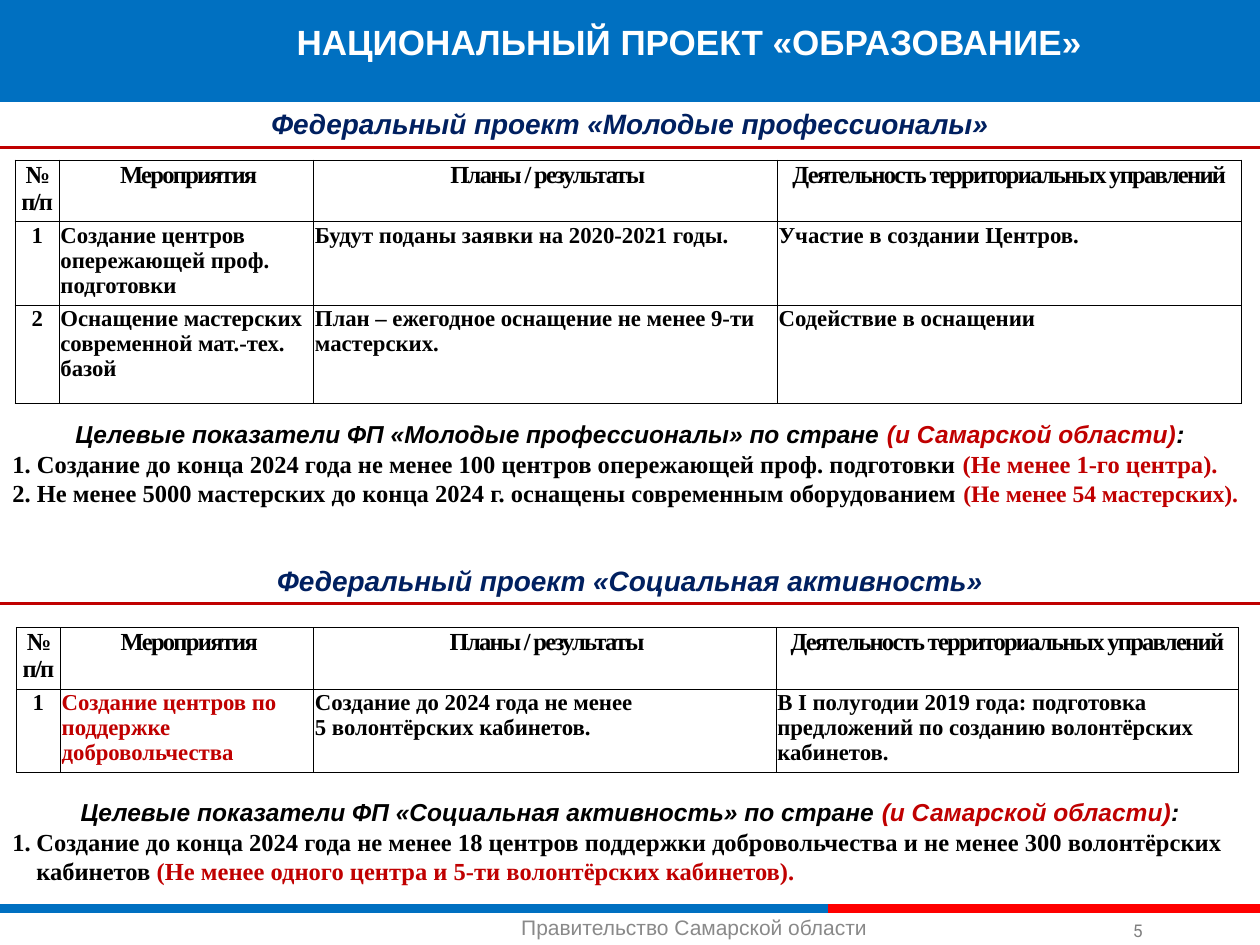
import dataclasses

import pptx
import pptx.dml.color
import pptx.enum.shapes
import pptx.enum.text
import pptx.oxml
import pptx.oxml.ns
import pptx.util

Inches = pptx.util.Inches
Pt = pptx.util.Pt
ALIGN = pptx.enum.text.PP_ALIGN
ANCHOR = pptx.enum.text.MSO_ANCHOR


@dataclasses.dataclass(frozen=True)
class Theme:
    blue: str = "0070C1"
    red: str = "FF0000"
    accent: str = "C00000"
    navy: str = "002060"
    black: str = "000000"
    white: str = "FFFFFF"
    footer: str = "898989"
    number: str = "808080"
    sans: str = "Arial"
    serif: str = "Times New Roman"
    number_font: str = "Roboto"
    title_size: float = 20
    heading_size: float = 16
    body_size: float = 14
    tight_size: float = 13.5
    cell_size: float = 13
    footer_size: float = 12
    number_size: float = 10


THEME = Theme()


@dataclasses.dataclass(frozen=True)
class Style:
    font: str
    size: float
    color: str = THEME.black
    bold: bool = True
    italic: bool = False
    spacing: int = 0  # hundredths of a point


TITLE = Style(THEME.sans, THEME.title_size, THEME.white)
HEADING = Style(THEME.sans, THEME.heading_size, THEME.navy, italic=True)
LEAD = Style(THEME.sans, THEME.body_size, italic=True)
LEAD_RED = dataclasses.replace(LEAD, color=THEME.accent)
BODY = Style(THEME.serif, THEME.body_size)
BODY_RED = dataclasses.replace(BODY, color=THEME.accent)
TIGHT_RED = dataclasses.replace(BODY_RED, size=THEME.tight_size)
TABLE_HEAD = dataclasses.replace(BODY, spacing=-100)
CELL = Style(THEME.serif, THEME.cell_size)
CELL_RED = dataclasses.replace(CELL, color=THEME.accent)
FOOTER = Style(THEME.sans, THEME.footer_size, THEME.footer, bold=False)
NUMBER = Style(THEME.number_font, THEME.number_size, THEME.number, bold=False)

TABLE_HEADERS = ("№ п/п", "\u00a0Мероприятия", "\u00a0Планы / результаты",
                 "Деятельность территориальных управлений")


def rgb(color):
    return pptx.dml.color.RGBColor.from_string(color)


def add_element(parent, xml):
    namespace = pptx.oxml.ns.nsdecls("a")
    parent.append(pptx.oxml.parse_xml(xml.replace("/>", f" {namespace}/>", 1)
                                      if xml.endswith("/>") and xml.count("<") == 1
                                      else xml.replace(">", f" {namespace}>", 1)))


def add_run(paragraph, text, style):
    run = paragraph.add_run()
    run.text = text
    run.font.name = style.font
    run.font.size = Pt(style.size)
    run.font.bold = style.bold
    run.font.italic = style.italic
    run.font.color.rgb = rgb(style.color)
    if style.spacing:
        run.font._element.set("spc", str(style.spacing))


def number_paragraph(paragraph):
    """Turn the paragraph into an automatically numbered item with a hanging indent."""
    properties = paragraph._p.get_or_add_pPr()
    properties.set("marL", str(Inches(0.19)))
    properties.set("indent", str(-Inches(0.19)))
    add_element(properties, '<a:buFont typeface="+mj-lt"/>')
    add_element(properties, '<a:buAutoNum type="arabicPeriod"/>')


def fill_text(text_frame, paragraphs, align=ALIGN.LEFT):
    """Write paragraphs, each a list of (text, style) runs."""
    for index, runs in enumerate(paragraphs):
        paragraph = text_frame.add_paragraph() if index else text_frame.paragraphs[0]
        paragraph.alignment = align
        for text, style in runs:
            add_run(paragraph, text, style)


def add_text(slide, box, paragraphs, align=ALIGN.LEFT, side=0.1, wrap=True, anchor=ANCHOR.TOP):
    text_frame = slide.shapes.add_textbox(*map(Inches, box)).text_frame
    text_frame.word_wrap = wrap
    text_frame.vertical_anchor = anchor
    text_frame.margin_left = text_frame.margin_right = Inches(side)
    text_frame.margin_top = text_frame.margin_bottom = Inches(0.05)
    fill_text(text_frame, paragraphs, align)
    return text_frame


def add_rule(slide, left, right, top, color, width):
    line = slide.shapes.add_connector(
        pptx.enum.shapes.MSO_CONNECTOR.STRAIGHT,
        Inches(left), Inches(top), Inches(right), Inches(top))
    line.line.color.rgb = rgb(color)
    line.line.width = Pt(width)
    add_element(line._element.spPr, "<a:effectLst/>")


def add_banner(slide):
    banner = slide.shapes.add_shape(
        pptx.enum.shapes.MSO_SHAPE.RECTANGLE, *map(Inches, (0, -0.03, 10, 0.84)))
    banner.shadow.inherit = False
    banner.fill.solid()
    banner.fill.fore_color.rgb = rgb(THEME.blue)
    banner.line.fill.background()


def format_cell(cell):
    cell.margin_left = cell.margin_right = cell.margin_top = Inches(0.01)
    cell.margin_bottom = 0
    for side in ("lnL", "lnR", "lnT", "lnB"):
        add_element(cell._tc.get_or_add_tcPr(),
                    f'<a:{side} w="{Pt(0.5)}"><a:solidFill><a:srgbClr val="{THEME.black}"/>'
                    f'</a:solidFill></a:{side}>')
    cell.fill.solid()
    cell.fill.fore_color.rgb = rgb(THEME.white)


def add_activity_table(slide, left, top, widths, heights, activities):
    """Add a numbered table; each activity is a row of cells, a cell a list of paragraphs."""
    rows = [[[[(header, TABLE_HEAD)]] for header in TABLE_HEADERS]]
    rows += [[[[(str(number), CELL)]], *cells] for number, cells in enumerate(activities, 1)]
    table = slide.shapes.add_table(
        len(rows), len(widths), Inches(left), Inches(top),
        Inches(sum(widths)), Inches(sum(heights))).table
    table.first_row = table.horz_banding = False
    for column, width in zip(table.columns, widths):
        column.width = Inches(width)
    for row_index, (row, height) in enumerate(zip(rows, heights)):
        table.rows[row_index].height = Inches(height)
        for column_index, paragraphs in enumerate(row):
            cell = table.cell(row_index, column_index)
            format_cell(cell)
            centered = row_index == 0 or column_index == 0
            fill_text(cell.text_frame, paragraphs, ALIGN.CENTER if centered else ALIGN.LEFT)


def add_heading(slide, top, project):
    add_text(slide, (0, top, 10, 0.37), [[(f"Федеральный проект «{project}»", HEADING)]],
             ALIGN.CENTER)
    add_rule(slide, 0, 10, top + 0.37, THEME.accent, 2)


def add_targets(slide, top, project, targets):
    lead = [(f"Целевые показатели ФП «{project}» по стране ", LEAD),
            ("(и Самарской области)", LEAD_RED), (":", LEAD)]
    text_frame = add_text(slide, (0, top, 10, 0.81), [lead, *targets])
    text_frame.paragraphs[0].alignment = ALIGN.CENTER
    return text_frame


def plain_cells(*texts):
    return [[[(text, CELL)]] for text in texts]


def main():
    presentation = pptx.Presentation()
    presentation.slide_width, presentation.slide_height = Inches(10), Inches(7.5)
    slide = presentation.slides.add_slide(presentation.slide_layouts[6])

    add_rule(slide, 0, 6.57, 7.21, THEME.blue, 5)
    add_text(slide, (2.24, 7.21, 6.54, 0.29), [[("Правительство Самарской области", FOOTER)]],
             ALIGN.CENTER, side=0.05)
    add_rule(slide, 6.57, 10, 7.21, THEME.red, 5)
    add_banner(slide)
    add_text(slide, (8.94, 7.27, 0.19, 0.25), [[("5", NUMBER)]],
             side=0.05, wrap=False, anchor=ANCHOR.BOTTOM)
    add_text(slide, (0.94, 0.11, 9.06, 0.44), [[("НАЦИОНАЛЬНЫЙ ПРОЕКТ «ОБРАЗОВАНИЕ»", TITLE)]],
             ALIGN.CENTER, side=0.05)

    project = "Молодые профессионалы"
    add_heading(slide, 0.8, project)
    add_activity_table(slide, 0.12, 1.27, (0.35, 2.02, 3.68, 3.68), (0.49, 0.66, 0.78), [
        plain_cells("Создание центров опережающей проф. подготовки",
                    "Будут поданы заявки на 2020-2021 годы.",
                    "Участие в создании Центров."),
        plain_cells("Оснащение мастерских современной мат.-тех. базой",
                    "План – ежегодное оснащение не менее 9-ти мастерских.",
                    "Содействие в оснащении")])
    add_targets(slide, 3.28, project, [
        [("1. Создание до конца 2024 года не менее 100 центров опережающей проф. подготовки ", BODY),
         ("(Не менее 1-го центра).", BODY_RED)],
        [("2. Не менее 5000 мастерских до конца 2024 г. оснащены современным оборудованием ", BODY),
         ("(Не менее 54 мастерских).", TIGHT_RED)]])

    project = "Социальная активность"
    add_heading(slide, 4.42, project)
    add_activity_table(slide, 0.13, 4.98, (0.35, 2.01, 3.67, 3.67), (0.49, 0.66), [[
        [[("Создание центров по поддержке добровольчества", CELL_RED)]],
        [[("Создание до 2024 года не менее", CELL)], [("5 волонтёрских кабинетов.", CELL)]],
        *plain_cells("В I полугодии 2019 года: подготовка предложений по созданию "
                     "волонтёрских кабинетов.")]])
    targets = add_targets(slide, 6.28, project, [
        [("Создание до конца 2024 года не менее 18 центров поддержки добровольчества "
          "и не менее 300 волонтёрских кабинетов ", BODY),
         ("(Не менее одного центра и 5-ти волонтёрских кабинетов).", BODY_RED)]])
    number_paragraph(targets.paragraphs[1])

    presentation.save("out.pptx")


if __name__ == "__main__":
    main()
